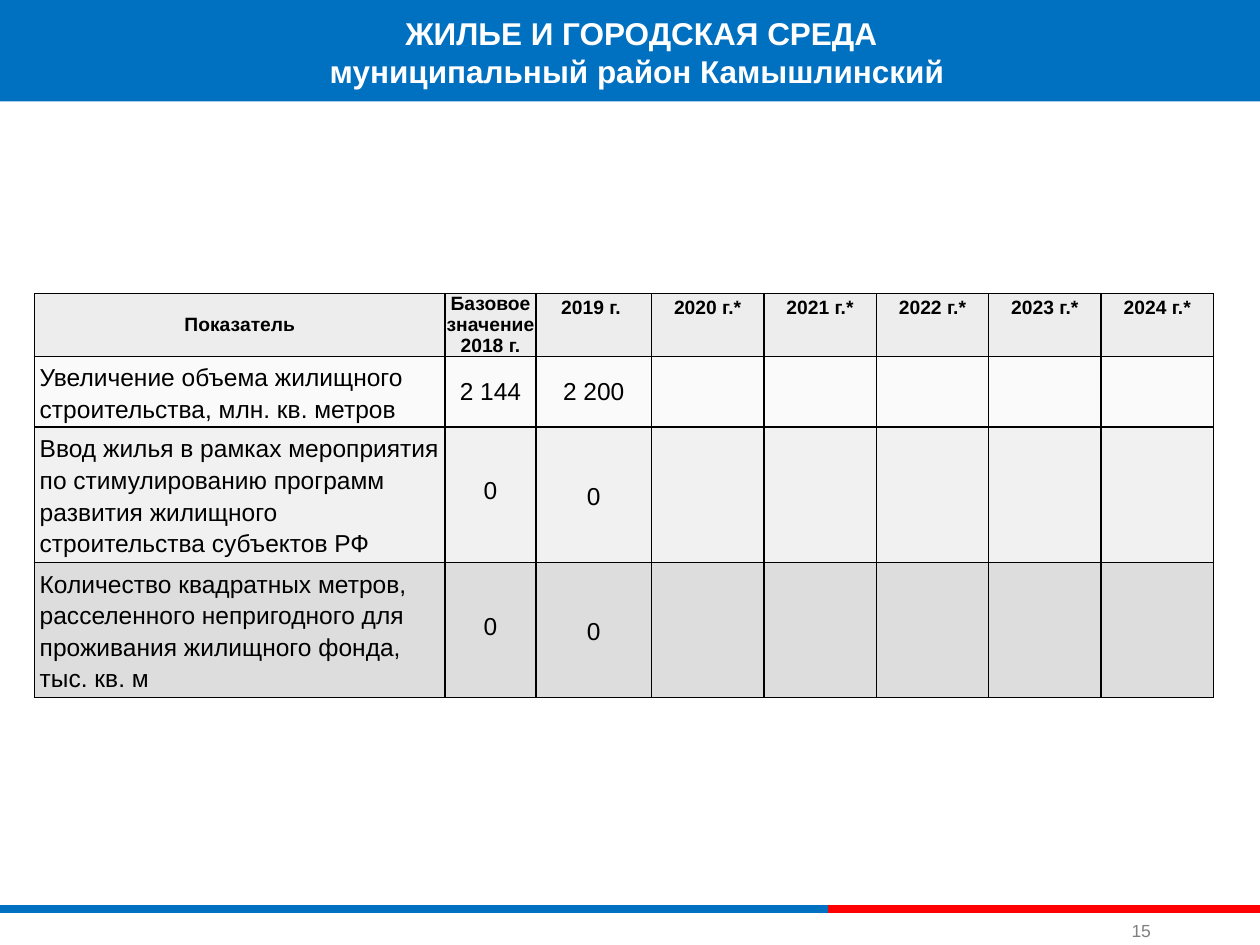
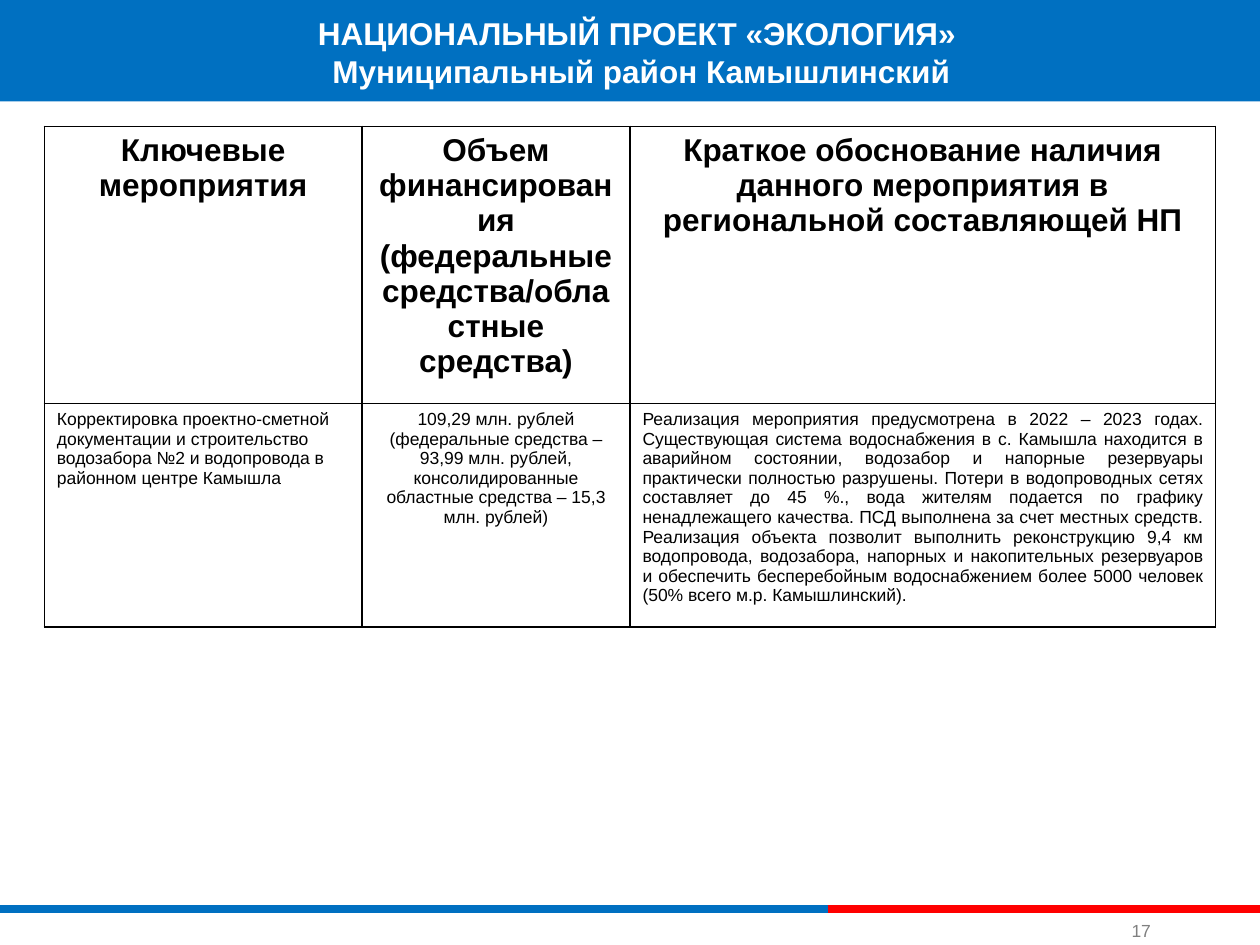
from dataclasses import dataclass, replace
from typing import Optional, Union

from lxml.etree import SubElement
from pptx import Presentation
from pptx.dml.color import RGBColor
from pptx.enum.shapes import MSO_CONNECTOR, MSO_SHAPE
from pptx.enum.text import MSO_ANCHOR, MSO_AUTO_SIZE, PP_ALIGN
from pptx.oxml import parse_xml
from pptx.oxml.ns import nsdecls, qn
from pptx.util import Length, Pt


@dataclass(frozen=True)
class Theme:
    font: str = "Arial"
    blue: str = "0070C1"
    red: str = "FF0000"
    white: str = "FFFFFF"
    black: str = "000000"
    gray: str = "808080"
    head_fill: str = "EDEDED"
    row_fills: tuple[str, ...] = ("F2F2F2", "D9D9D9", "BFBFBF")
    title: int = 18
    head: int = 11
    body: int = 14
    small: int = 10


THEME = Theme()


@dataclass(frozen=True)
class Look:
    size: int
    bold: bool = False
    color: str = THEME.black
    align: PP_ALIGN = PP_ALIGN.CENTER
    anchor: MSO_ANCHOR = MSO_ANCHOR.TOP
    spacing: Optional[Union[float, Length]] = None
    after: float = 0
    indent: float = 0


@dataclass(frozen=True)
class Fill:
    color: str
    alpha: int = 100


@dataclass(frozen=True)
class Cell:
    text: str
    look: Look


@dataclass(frozen=True)
class Grid:
    left: float
    top: float
    cols: list[float]
    rows: list[float]
    cells: list[list[Cell]]
    fills: list[Optional[Fill]]
    pad: tuple[float, float]


@dataclass(frozen=True)
class Page:
    title: str
    width: float
    number: str
    grid: Grid


WIDTH, HEIGHT = 720, 540
BAND = 58
RULE_TOP, RULE_SPLIT, RULE_SIZE = 519.4, 473, 5
TITLE_MID = 366.5
INSET = 3.6

TITLE = Look(THEME.title, True, THEME.white)
NUMBER = Look(THEME.small, color=THEME.gray, align=PP_ALIGN.LEFT,
              anchor=MSO_ANCHOR.BOTTOM)


def style(frame, look: Look) -> None:
    for par in frame.paragraphs:
        par.alignment = look.align
        par.space_after = Pt(look.after)
        if look.spacing:
            par.line_spacing = look.spacing
        if look.indent:
            props = par._p.get_or_add_pPr()
            props.set("marL", str(Pt(look.indent)))
            props.set("indent", "0")
        for run in par.runs:
            run.font.name = THEME.font
            run.font.size = Pt(look.size)
            run.font.bold = look.bold
            run.font.color.rgb = RGBColor.from_string(look.color)


def label(shape, text: str, look: Look) -> None:
    """Fill a one-piece text shape that grows with its text."""
    frame = shape.text_frame
    frame.text = text
    frame.word_wrap = False
    frame.auto_size = MSO_AUTO_SIZE.SHAPE_TO_FIT_TEXT
    frame.vertical_anchor = look.anchor
    frame.margin_left = frame.margin_right = Pt(INSET)
    frame.margin_top = frame.margin_bottom = Pt(INSET)
    style(frame, look)


def draw_rule(slide, start: float, end: float, color: str) -> None:
    line = slide.shapes.add_connector(
        MSO_CONNECTOR.STRAIGHT, Pt(start), Pt(RULE_TOP), Pt(end), Pt(RULE_TOP))
    line.line.color.rgb = RGBColor.from_string(color)
    line.line.width = Pt(RULE_SIZE)
    SubElement(line._element.spPr, qn("a:effectLst"))


def draw_frame(slide, page: Page) -> None:
    """Draw the band, title, rules and page number."""
    draw_rule(slide, 0, RULE_SPLIT, THEME.blue)
    draw_rule(slide, RULE_SPLIT, WIDTH, THEME.red)
    band = slide.shapes.add_shape(MSO_SHAPE.RECTANGLE, 0, 0, Pt(WIDTH), Pt(BAND))
    band.shadow.inherit = False
    band.fill.solid()
    band.fill.fore_color.rgb = RGBColor.from_string(THEME.blue)
    band.line.fill.background()

    title = slide.shapes.title
    band._element.addnext(title._element)
    title.left, title.top = Pt(TITLE_MID - page.width / 2), Pt(4.3)
    title.width, title.height = Pt(page.width), Pt(51)
    label(title, page.title, TITLE)

    box = slide.shapes.add_textbox(Pt(643), Pt(523.5), Pt(20), Pt(18))
    label(box, page.number, NUMBER)


def paint(cell, fill: Optional[Fill]) -> None:
    """Set the fill and the four borders of a cell."""
    props = cell._tc.get_or_add_tcPr()
    if fill:
        cell.fill.solid()
        cell.fill.fore_color.rgb = RGBColor.from_string(fill.color)
        if fill.alpha < 100:
            color = props.find(qn("a:solidFill")).find(qn("a:srgbClr"))
            SubElement(color, qn("a:alpha")).set("val", str(fill.alpha * 1000))
    else:
        cell.fill.background()
    for spot, side in enumerate(("lnL", "lnR", "lnT", "lnB")):
        props.insert(spot, parse_xml(
            f'<a:{side} {nsdecls("a")} w="{Pt(1)}"><a:solidFill>'
            f'<a:srgbClr val="{THEME.black}"/></a:solidFill></a:{side}>'))


def draw_grid(slide, grid: Grid) -> None:
    table = slide.shapes.add_table(
        len(grid.rows), len(grid.cols), Pt(grid.left), Pt(grid.top),
        Pt(sum(grid.cols)), Pt(sum(grid.rows))).table
    table.first_row = table.horz_banding = False
    for col, width in zip(table.columns, grid.cols):
        col.width = Pt(width)
    for row, height, items, fill in zip(
            table.rows, grid.rows, grid.cells, grid.fills):
        row.height = Pt(height)
        for cell in row.cells:
            cell.margin_left = cell.margin_right = Pt(grid.pad[0])
            cell.margin_top = cell.margin_bottom = Pt(grid.pad[1])
            paint(cell, fill)
        for cell, item in zip(row.cells, items):
            cell.text_frame.text = item.text
            cell.vertical_anchor = item.look.anchor
            style(cell.text_frame, item.look)


def housing() -> Page:
    year = Look(THEME.head, True, spacing=1.15)
    head = replace(year, anchor=MSO_ANCHOR.MIDDLE, spacing=Pt(12))
    base = replace(head, anchor=MSO_ANCHOR.BOTTOM)
    value = Look(THEME.body, anchor=MSO_ANCHOR.MIDDLE)
    name = replace(value, align=PP_ALIGN.LEFT, spacing=1.15, indent=2.2)
    tight = replace(value, spacing=Pt(12))
    loose = replace(value, spacing=1.15)
    cells = [
        [Cell("Показатель", head), Cell("Базовое значение 2018 г.", base),
         Cell("2019 г. ", year),
         *(Cell(f"{num} г.*", year) for num in range(2020, 2025))],
        [Cell("Увеличение объема жилищного строительства, "
              "млн. кв. метров", name),
         Cell("2 144", value), Cell("2 200", value)],
        [Cell("Ввод жилья в рамках мероприятия по стимулированию программ "
              "развития жилищного строительства субъектов РФ", name),
         Cell("0", tight), Cell("0", loose)],
        [Cell("Количество квадратных метров, расселенного непригодного для "
              "проживания жилищного фонда, тыс. кв. м", name),
         Cell("0", tight), Cell("0", replace(loose, after=10))],
    ]
    fills = [Fill(THEME.head_fill), *map(Fill, THEME.row_fills, (36, 35, 52))]
    grid = Grid(19.8, 167.8, [234.5, 52, 66] + [64.25] * 5,
                [36, 40.3, 77.2, 77.2], cells, fills, (0.7, 0))
    return Page("ЖИЛЬЕ И ГОРОДСКАЯ СРЕДА\nмуниципальный район Камышлинский ",
                367, "15", grid)


def ecology() -> Page:
    head = Look(THEME.title, True)
    mid = Look(THEME.small)
    cells = [
        [Cell(text, head) for text in (
            "Ключевые мероприятия",
            "Объем финансирования (федеральные средства/областные средства)",
            "Краткое обоснование наличия данного мероприятия в "
            "региональной составляющей НП")],
        [Cell("Корректировка проектно-сметной документации и строительство "
              "водозабора №2 и водопровода в районном центре Камышла",
              replace(mid, align=PP_ALIGN.LEFT)),
         Cell("109,29 млн. рублей (федеральные средства – 93,99 млн. рублей, "
              "консолидированные областные средства – 15,3 млн. рублей)", mid),
         Cell("Реализация мероприятия предусмотрена в 2022 – 2023 годах. "
              "Существующая система водоснабжения в с. Камышла находится в "
              "аварийном состоянии, водозабор и напорные резервуары "
              "практически полностью разрушены. Потери в водопроводных сетях "
              "составляет до 45 %., вода жителям подается по графику "
              "ненадлежащего качества. ПСД выполнена за счет местных средств. "
              "Реализация объекта позволит выполнить реконструкцию 9,4 км "
              "водопровода, водозабора, напорных и накопительных резервуаров "
              "и обеспечить бесперебойным водоснабжением более 5000 человек "
              "(50% всего м.р. Камышлинский).",
              replace(mid, align=PP_ALIGN.JUSTIFY))],
    ]
    grid = Grid(25.3, 72.2, [181.5, 153.2, 334.5], [158.5, 127.5], cells,
                [None, None], (7.2, 3.6))
    return Page("НАЦИОНАЛЬНЫЙ ПРОЕКТ «ЭКОЛОГИЯ» \nМуниципальный район Камышлинский",
                381, "17", grid)


def main() -> None:
    deck = Presentation()
    deck.slide_width, deck.slide_height = Pt(WIDTH), Pt(HEIGHT)
    for page in (housing(), ecology()):
        slide = deck.slides.add_slide(deck.slide_layouts[5])
        draw_frame(slide, page)
        draw_grid(slide, page.grid)
    deck.save("out.pptx")


if __name__ == "__main__":
    main()
